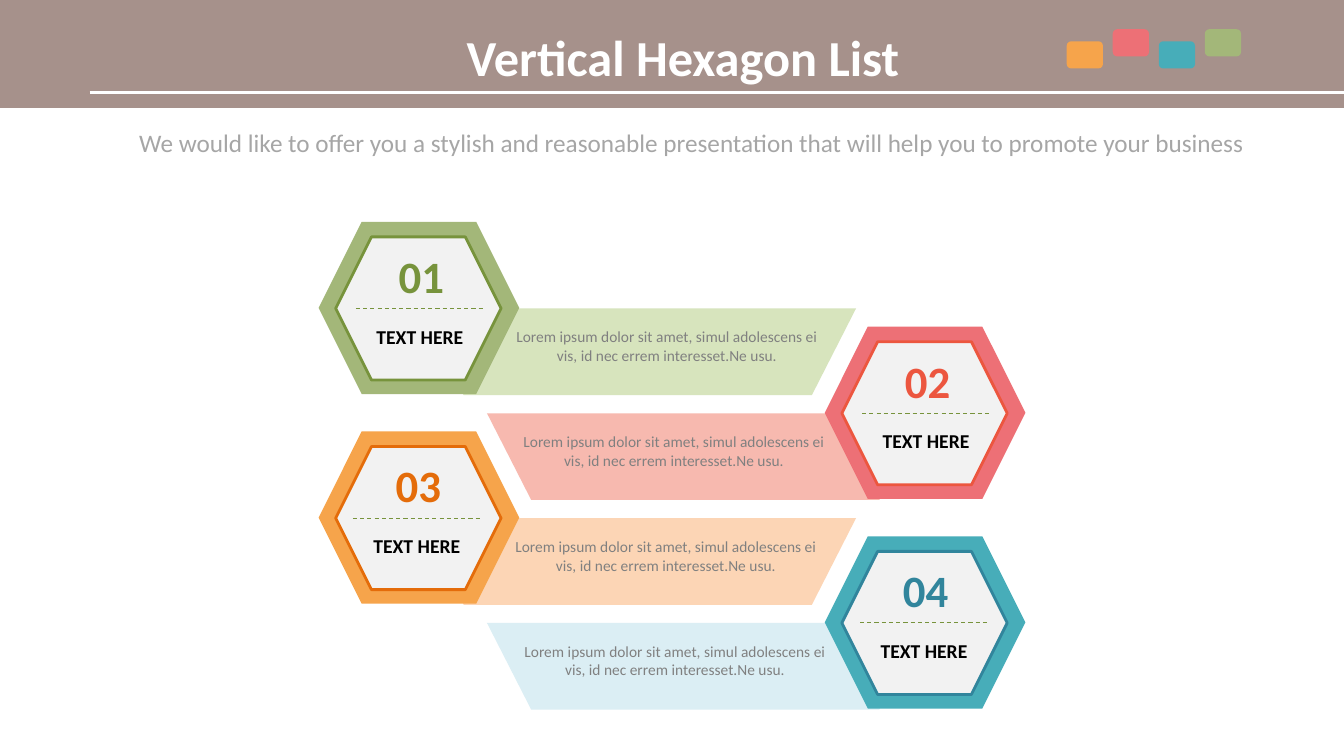
from dataclasses import dataclass
from lxml.etree import SubElement
from pptx import Presentation
from pptx.dml.color import RGBColor
from pptx.enum.dml import MSO_LINE
from pptx.enum.shapes import MSO_CONNECTOR, MSO_SHAPE
from pptx.enum.text import MSO_ANCHOR, MSO_AUTO_SIZE, PP_ALIGN
from pptx.oxml.ns import qn
from pptx.util import Inches, Pt

COLS, ROWS = 1333, 750
CELL = Inches(13.33) / COLS


@dataclass(frozen=True)
class Theme:
    """Colours and type sizes of the deck."""
    font: str = "Calibri"
    band: str = "A6918B"
    white: str = "FFFFFF"
    black: str = "000000"
    pale: str = "F2F2F2"
    soft: str = "A6A6A6"
    gray: str = "808080"
    green: str = "A3B779"
    moss: str = "77933C"
    mint: str = "D7E4BD"
    red: str = "ED7076"
    brick: str = "EC563F"
    rose: str = "F7B9AF"
    gold: str = "F6A44B"
    rust: str = "E46C0A"
    peach: str = "FCD5B5"
    teal: str = "47ADB9"
    navy: str = "31859C"
    ice: str = "DBEEF4"
    title: int = 36
    number: int = 32
    lead: int = 18
    label: int = 14
    note: int = 11


@dataclass(frozen=True)
class Box:
    """A region measured in grid columns and rows."""
    left: float
    top: float
    wide: float
    tall: float

    def cut(self, left, top, wide, tall):
        """Return a part placed relative to this box."""
        return Box(self.left + left, self.top + top, wide, tall)

    def size(self):
        """Return left, top, width and height as slide lengths."""
        return [round(n * CELL) for n in (self.left, self.top, self.wide, self.tall)]


@dataclass(frozen=True)
class Item:
    """One entry: number, three tones, text nudge and note start."""
    number: str
    fill: str
    edge: str
    tint: str
    nudge: int
    note: int


THEME = Theme()
NOTE = "Lorem ipsum dolor sit amet, simul adolescens ei vis, id nec errem interesset.Ne usu."
ITEMS = [
    Item("01", THEME.green, THEME.moss, THEME.mint, 0, 185),
    Item("02", THEME.red, THEME.brick, THEME.rose, 0, 25),
    Item("03", THEME.gold, THEME.rust, THEME.peach, -3, 184),
    Item("04", THEME.teal, THEME.navy, THEME.ice, -2, 26),
]


def tone(code):
    """Turn a hex code into a colour."""
    return RGBColor.from_string(code)


def form(shapes, kind, box, fill, edge=None):
    """Add a filled shape, outlined when an edge colour is given."""
    shape = shapes.add_shape(kind, *box.size())
    shape.shadow.inherit = False
    shape.fill.solid()
    shape.fill.fore_color.rgb = tone(fill)
    if edge:
        shape.line.color.rgb = tone(edge)
        shape.line.width = Pt(2)
    else:
        shape.line.fill.background()
    return shape


def rule(shapes, box, color, width, dash=None):
    """Add a level line along the top of the box."""
    left, top, wide, _ = box.size()
    line = shapes.add_connector(MSO_CONNECTOR.STRAIGHT, left, top, left + wide, top)
    line.line.color.rgb = tone(color)
    line.line.width = Pt(width)
    if dash:
        line.line.dash_style = dash
    SubElement(line.element.spPr, qn("a:effectLst"))


def write(shape, text, size, color, bold=False, anchor=MSO_ANCHOR.TOP):
    """Fill a text shape with one centred run and return its paragraph."""
    frame = shape.text_frame
    frame.word_wrap = True
    frame.auto_size = MSO_AUTO_SIZE.NONE
    frame.vertical_anchor = anchor
    para = frame.paragraphs[0]
    para.alignment = PP_ALIGN.CENTER
    run = para.add_run()
    run.text = text
    run.font.name = THEME.font
    run.font.size = Pt(size)
    run.font.bold = bold
    run.font.color.rgb = tone(color)
    return para


def header(slide, box):
    """Place the band, its line, the four chips and the title."""
    shapes = slide.shapes
    form(shapes, MSO_SHAPE.RECTANGLE, box, THEME.band)
    rule(shapes, box.cut(89, 92, box.wide - 89, 0), THEME.white, 2.25)
    for col, fill in enumerate((THEME.gold, THEME.red, THEME.teal, THEME.green)):
        chip = box.cut(1058 + 45.67 * col, 29 if col % 2 else 41, 36, 27)
        form(shapes, MSO_SHAPE.ROUNDED_RECTANGLE, chip, fill)
    title = shapes.title
    title.left, title.top, title.width, title.height = box.cut(79, 13, 1197, 85).size()
    write(title, "Vertical Hexagon List", THEME.title, THEME.white, True, MSO_ANCHOR.MIDDLE)
    title.element.getparent().append(title.element)


def lead(slide, box):
    """Place the line of text below the header."""
    text = "We would like to offer you a stylish and reasonable presentation that will help you to promote your business"
    para = write(slide.shapes.add_textbox(*box.size()), text, THEME.lead, THEME.soft,
                 anchor=MSO_ANCHOR.MIDDLE)
    para.line_spacing = Pt(12)


def entry(slide, box, item, right):
    """Place one hexagon with its bar, on the left or right of the box."""
    shapes = slide.shapes.add_group_shape().shapes
    bar = form(shapes, MSO_SHAPE.TRAPEZOID, box.cut(0 if right else 100, 86, 433, 86), item.tint)
    bar.adjustments[0] = 0.51
    bar.rotation = 180
    hexa = box.cut(box.wide - 199 if right else 0, 0, 199, 171)
    form(shapes, MSO_SHAPE.HEXAGON, hexa, item.fill)
    form(shapes, MSO_SHAPE.HEXAGON, hexa.cut(17, 15, 164, 142), THEME.pale, item.edge)
    text = hexa.cut(item.nudge, 0, 199, 171)
    parts = [
        (text.cut(35, 97, 131, 34), "TEXT HERE", THEME.label, THEME.black, True),
        (text.cut(66, 21.5, 72, 64), item.number, THEME.number, item.edge, True),
        (box.cut(item.note, 100, 321, 50), NOTE, THEME.note, THEME.gray, False),
    ]
    for part, *words in parts:
        write(shapes.add_textbox(*part.size()), *words)
    rule(shapes, text.cut(37, 86, 127, 0), THEME.moss, 0.75, MSO_LINE.DASH)


def body(slide, box):
    """Stack the entries at equal steps, on alternate sides."""
    for row, item in enumerate(ITEMS):
        right = row % 2 == 1
        entry(slide, box.cut(167 if right else 0, 104 * row, 534, 172), item, right)


def main():
    """Build and save the slide."""
    deck = Presentation()
    deck.slide_width, deck.slide_height = round(COLS * CELL), round(ROWS * CELL)
    slide = deck.slides.add_slide(deck.slide_layouts[5])
    header(slide, Box(0, 0, COLS, 107))
    lead(slide, Box(115, 133, 1142, 29))
    body(slide, Box(316, 220, 701, 484))
    deck.save("out.pptx")


if __name__ == "__main__":
    main()
